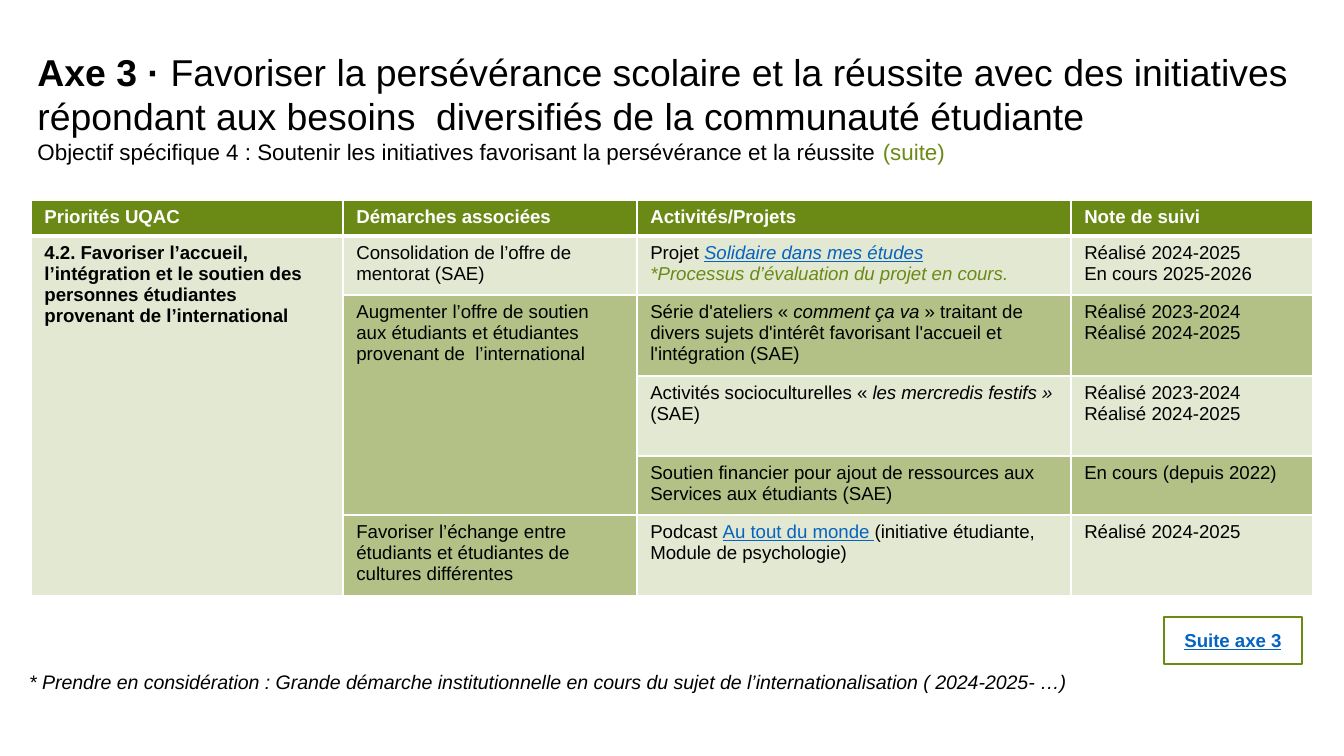
"""Build the slide on axis 3, objective 4, with its follow-up table."""
from dataclasses import dataclass
from typing import Optional

from lxml import etree
from pptx import Presentation
from pptx import util as u
from pptx.dml.color import RGBColor
from pptx.enum import shapes, text
from pptx.oxml.ns import qn

PX = 6804
FONT = "Arial"
BLACK = RGBColor(0x00, 0x00, 0x00)
WHITE = RGBColor(0xFF, 0xFF, 0xFF)
GREEN = RGBColor(0x6B, 0x8A, 0x15)
PALE = RGBColor(0xE3, 0xE8, 0xD3)
SAGE = RGBColor(0xB3, 0xC1, 0x86)
LINK = RGBColor(0x05, 0x63, 0xC1)


@dataclass(frozen=True)
class Span:
    words: str
    size: float = 10
    color: RGBColor = BLACK
    bold: bool = False
    italic: bool = False
    underline: bool = False


@dataclass(frozen=True)
class Entry:
    row: int
    column: int
    fill: RGBColor
    lines: list[list[Span]]
    rows: int = 1


@dataclass(frozen=True)
class Area:
    left: int
    top: int
    width: int
    height: int

    def emu(self) -> list[u.Emu]:
        return [u.Emu(n * PX) for n in (self.left, self.top, self.width, self.height)]


COLUMNS = [312, 294, 434, 242]
ROWS = [36, 59, 81, 80, 59, 81]
TABLE = Area(31, 200, sum(COLUMNS), sum(ROWS))
TITLE = Area(24, 42, 1290, 136)
BUTTON = Area(1164, 617, 138, 47)
FOOTNOTE = Area(16, 663, 1090, 38)

TITLE_LINES = [
    [Span("Axe 3 · ", 20, bold=True),
     Span("Favoriser la persévérance scolaire et la réussite avec des initiatives "
          "répondant aux besoins  diversifiés de la communauté étudiante", 20)],
    [Span("Objectif spécifique 4 : Soutenir les initiatives favorisant la persévérance "
          "et la réussite ", 12),
     Span("(suite)", 12, GREEN)],
]
HEADERS = ["Priorités UQAC", "Démarches associées", "Activités/Projets", "Note de suivi"]


def plain(*lines: str) -> list[list[Span]]:
    """Turn each line into a paragraph of one regular span."""
    return [[Span(line)] for line in lines]


ENTRIES = [
    Entry(0, column, GREEN, [[Span(header, color=WHITE, bold=True)]])
    for column, header in enumerate(HEADERS)
] + [
    Entry(1, 0, PALE, [[Span("4.2. Favoriser l’accueil, l’intégration et le soutien des personnes "
                             "étudiantes provenant de l’international", bold=True)]], rows=5),
    Entry(1, 1, PALE, plain("Consolidation de l’offre de mentorat (SAE)")),
    Entry(1, 2, PALE, [
        [Span("Projet "),
         Span("Solidaire dans mes études", color=LINK, italic=True, underline=True)],
        [Span("*Processus d’évaluation du projet en cours.", color=GREEN, italic=True)],
    ]),
    Entry(1, 3, PALE, plain("Réalisé 2024-2025", "En cours 2025-2026")),
    Entry(2, 1, SAGE, plain("Augmenter l’offre de soutien aux étudiants et étudiantes "
                            "provenant de  l’international"), rows=3),
    Entry(2, 2, SAGE, [[
        Span("Série d'ateliers « "), Span("comment ça va ", italic=True),
        Span("» traitant de divers sujets d'intérêt favorisant l'accueil et l'intégration (SAE)"),
    ]]),
    Entry(2, 3, SAGE, plain("Réalisé 2023-2024", "Réalisé 2024-2025")),
    Entry(3, 2, PALE, [[
        Span("Activités socioculturelles « "), Span("les mercredis festifs »", italic=True),
        Span(" (SAE)"),
    ]]),
    Entry(3, 3, PALE, plain("Réalisé 2023-2024", "Réalisé 2024-2025")),
    Entry(4, 2, SAGE, plain("Soutien financier pour ajout de ressources aux Services "
                            "aux étudiants (SAE)")),
    Entry(4, 3, SAGE, plain("En cours (depuis 2022)")),
    Entry(5, 1, SAGE, plain("Favoriser l’échange entre étudiants et étudiantes "
                            "de cultures différentes")),
    Entry(5, 2, PALE, [[
        Span("Podcast "), Span("Au tout du monde ", color=LINK, underline=True),
        Span("(initiative étudiante, Module de psychologie)"),
    ]]),
    Entry(5, 3, PALE, plain("Réalisé 2024-2025")),
]


def write(frame, lines: list[list[Span]], align=text.PP_ALIGN.LEFT) -> None:
    """Fill a text frame with paragraphs, run by run."""
    frame.word_wrap = True
    for index, line in enumerate(lines):
        para = frame.paragraphs[0] if index == 0 else frame.add_paragraph()
        para.alignment = align
        for span in line:
            run = para.add_run()
            run.text = span.words
            font = run.font
            font.name, font.size = FONT, u.Pt(span.size)
            font.bold, font.italic, font.underline = span.bold, span.italic, span.underline
            font.color.rgb = span.color


def draw_borders(cell, bottom: float) -> None:
    """Give a cell white edges, with its own bottom weight in points."""
    properties = cell._tc.get_or_add_tcPr()
    for side, weight in (("L", 1), ("R", 1), ("T", 1), ("B", bottom)):
        line = etree.SubElement(properties, qn(f"a:ln{side}"), w=str(u.Pt(weight)))
        fill = etree.SubElement(line, qn("a:solidFill"))
        etree.SubElement(fill, qn("a:srgbClr"), val=str(WHITE))


def draw_title(page) -> None:
    """Place and fill the title placeholder."""
    title = page.shapes.title
    title.left, title.top, title.width, title.height = TITLE.emu()
    frame = title.text_frame
    frame.auto_size = text.MSO_AUTO_SIZE.NONE
    frame.vertical_anchor = text.MSO_ANCHOR.TOP
    write(frame, TITLE_LINES)


def draw_table(page, entries: list[Entry]) -> None:
    """Draw the follow-up table with its merged cells."""
    table = page.shapes.add_table(len(ROWS), len(COLUMNS), *TABLE.emu()).table
    for column, width in zip(table.columns, COLUMNS):
        column.width = u.Emu(width * PX)
    for row, height in zip(table.rows, ROWS):
        row.height = u.Emu(height * PX)
    for cell in table.iter_cells():
        draw_borders(cell, 1)
    for cell in table.rows[0].cells:
        cell._tc.tcPr.find(qn("a:lnB")).set("w", str(u.Pt(3)))
    for entry in entries:
        cell = table.cell(entry.row, entry.column)
        for row in range(entry.row, entry.row + entry.rows):
            fill = table.cell(row, entry.column).fill
            fill.solid()
            fill.fore_color.rgb = entry.fill
        if entry.rows > 1:
            cell.merge(table.cell(entry.row + entry.rows - 1, entry.column))
        write(cell.text_frame, entry.lines)


def draw_button(page, area: Area, label: Span, edge: Optional[RGBColor] = GREEN) -> None:
    """Draw an outlined white box with a centred label."""
    box = page.shapes.add_shape(shapes.MSO_SHAPE.RECTANGLE, *area.emu())
    box.shadow.inherit = False
    box.fill.solid()
    box.fill.fore_color.rgb = WHITE
    box.line.color.rgb = edge
    box.line.width = u.Pt(1)
    box.text_frame.vertical_anchor = text.MSO_ANCHOR.MIDDLE
    write(box.text_frame, [[label]], text.PP_ALIGN.CENTER)


def main() -> None:
    """Assemble and save the deck."""
    deck = Presentation()
    deck.slide_width, deck.slide_height = u.Emu(1344 * PX), u.Emu(756 * PX)
    page = deck.slides.add_slide(deck.slide_layouts.get_by_name("Title Only"))
    draw_title(page)
    draw_table(page, ENTRIES)
    draw_button(page, BUTTON, Span("Suite axe 3", color=LINK, bold=True, underline=True))
    footnote = page.shapes.add_textbox(*FOOTNOTE.emu())
    write(footnote.text_frame, [[Span(
        "* Prendre en considération : Grande démarche institutionnelle en cours du sujet "
        "de l’internationalisation ( 2024-2025- …)", 10.5, italic=True)]])
    deck.save("out.pptx")


if __name__ == "__main__":
    main()
